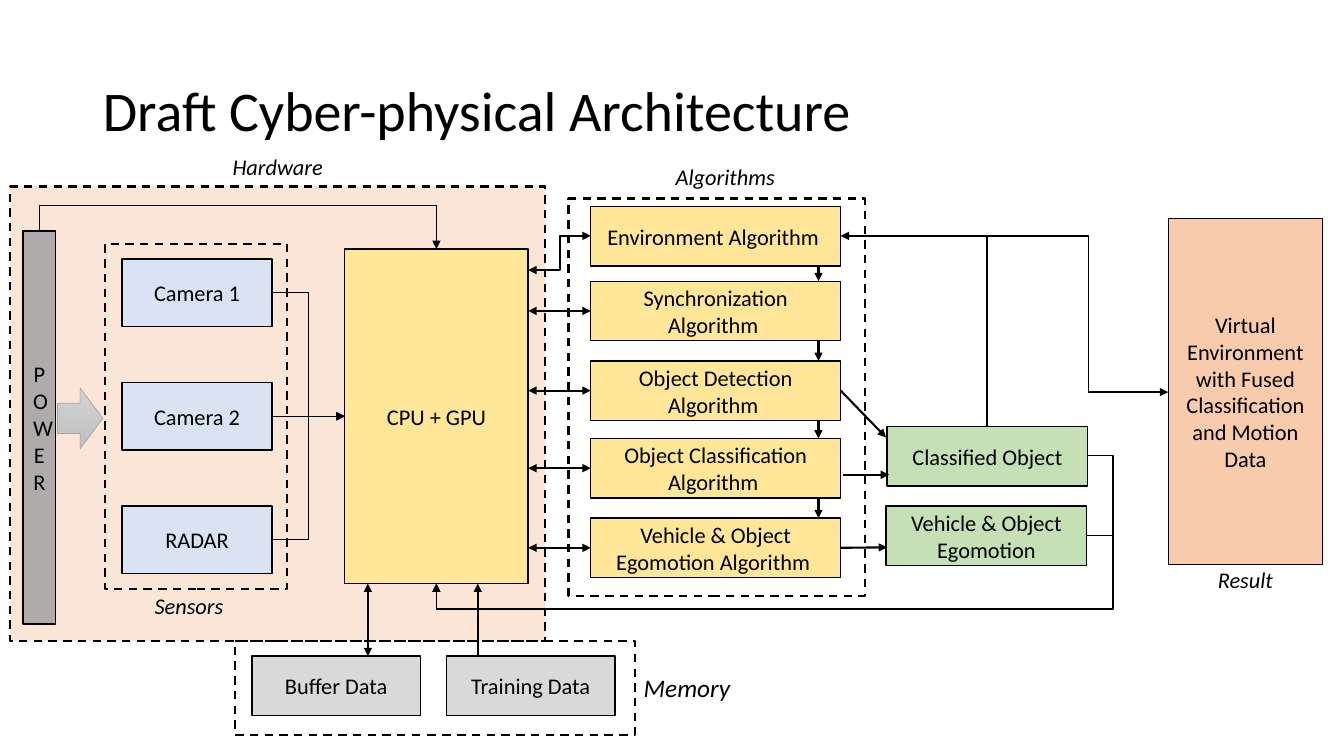
from itertools import pairwise

from lxml.etree import SubElement
from pptx import Presentation
from pptx.dml.color import RGBColor
from pptx.enum.dml import MSO_LINE
from pptx.enum.shapes import MSO_CONNECTOR, MSO_SHAPE
from pptx.enum.text import MSO_ANCHOR, MSO_AUTO_SIZE, PP_ALIGN
from pptx.oxml.ns import qn
from pptx.util import Inches, Pt

CELL = Inches(0.1)
COLUMNS, ROWS = 133.33, 75
TOP, LEFT, BOTTOM, RIGHT = range(4)

BLACK = RGBColor(0x00, 0x00, 0x00)
PEACH = RGBColor(0xFB, 0xE5, 0xD6)
BLUE = RGBColor(0xDA, 0xE3, 0xF3)
YELLOW = RGBColor(0xFF, 0xE6, 0x99)
GREEN = RGBColor(0xC5, 0xE0, 0xB4)
ORANGE = RGBColor(0xF8, 0xCB, 0xAD)
LIGHT_GRAY = RGBColor(0xD9, 0xD9, 0xD9)
POWER_GRAY = RGBColor(0xAF, 0xAB, 0xAB)
ARROW_LIGHT = RGBColor(0xD2, 0xD2, 0xD2)
ARROW_DARK = RGBColor(0xC0, 0xC0, 0xC0)
ARROW_EDGE = RGBColor(0xA5, 0xA5, 0xA5)


def cells(*counts):
    return [round(count * CELL) for count in counts]


def write(holder, text, size=16, italic=False, align=PP_ALIGN.CENTER,
          anchor=MSO_ANCHOR.MIDDLE, spacing=None):
    frame = holder.text_frame
    frame.word_wrap = True
    frame.vertical_anchor = anchor
    paragraph = frame.paragraphs[0]
    paragraph.alignment = align
    paragraph.line_spacing = spacing
    run = paragraph.add_run()
    run.text = text
    run.font.name = "Calibri"
    run.font.size = Pt(size)
    run.font.italic = italic
    run.font.color.rgb = BLACK


def add_title(slide, text):
    title = slide.shapes.title
    title.left, title.top, title.width, title.height = cells(9.2, 4, 115, 14.5)
    write(title, text, size=40, align=PP_ALIGN.LEFT, spacing=0.9)


def add_box(slide, text, fill, *grid):
    box = slide.shapes.add_shape(MSO_SHAPE.RECTANGLE, *cells(*grid))
    box.shadow.inherit = False
    box.fill.solid()
    box.fill.fore_color.rgb = fill
    box.line.color.rgb = BLACK
    box.line.width = Pt(1)
    write(box, text)
    return box


def add_group_frame(slide, *grid, fill=None):
    frame = slide.shapes.add_shape(MSO_SHAPE.RECTANGLE, *cells(*grid))
    frame.shadow.inherit = False
    if fill is None:
        frame.fill.background()
    else:
        frame.fill.solid()
        frame.fill.fore_color.rgb = fill
    frame.line.color.rgb = BLACK
    frame.line.width = Pt(1.5)
    frame.line.dash_style = MSO_LINE.DASH


def add_caption(slide, text, *grid, size=16):
    caption = slide.shapes.add_textbox(*cells(*grid))
    write(caption, text, size=size, italic=True, anchor=MSO_ANCHOR.TOP)
    caption.text_frame.auto_size = MSO_AUTO_SIZE.SHAPE_TO_FIT_TEXT


def add_power_arrow(slide, *grid):
    arrow = slide.shapes.add_shape(MSO_SHAPE.RIGHT_ARROW, *cells(*grid))
    arrow.shadow.inherit = False
    arrow.fill.gradient()
    arrow.fill.gradient_angle = 270
    for stop, color in zip(arrow.fill.gradient_stops, (ARROW_LIGHT, ARROW_DARK)):
        stop.color.rgb = color
    arrow.line.color.rgb = ARROW_EDGE
    arrow.line.width = Pt(0.5)


def format_wire(wire, width, ends):
    wire.line.color.rgb = BLACK
    wire.line.width = Pt(width)
    outline = wire.line._ln
    for end in ends:
        SubElement(outline, qn(f"a:{end}End"), type="triangle")
    SubElement(wire._element.spPr, qn("a:effectLst"))


def add_wire(slide, start, stop, width=1.5, ends=("tail",), begin=None, end=None):
    wire = slide.shapes.add_connector(MSO_CONNECTOR.STRAIGHT, *cells(*start, *stop))
    if begin:
        wire.begin_connect(*begin)
    if end:
        wire.end_connect(*end)
    format_wire(wire, width, ends)


def add_elbow(slide, start, stop, *bends, width=1, ends=("tail",), upright=False):
    (x1, y1), (x2, y2) = start, stop
    spans = [(y1, y2)] if upright else [(x1, x2), (y1, y2)]
    if upright:
        x, y = (x1 + x2) / 2, (y1 + y2) / 2
        start, stop = [(x - (py - y), y + (px - x)) for px, py in (start, stop)]
    elbow = slide.shapes.add_connector(MSO_CONNECTOR.ELBOW, *cells(*start, *stop))
    properties = elbow._element.spPr
    if upright:
        properties.find(qn("a:xfrm")).set("rot", "16200000")
    geometry = properties.find(qn("a:prstGeom"))
    geometry.set("prst", f"bentConnector{len(bends) + 2}")
    guides = geometry.find(qn("a:avLst"))
    if guides is None:
        guides = SubElement(geometry, qn("a:avLst"))
    for number, (bend, (low, high)) in enumerate(zip(bends, spans), 1):
        name = "adj" if len(bends) == 1 else f"adj{number}"
        name = "adj1" if name == "adj" else name
        share = round((bend - low) / (high - low) * 100000)
        SubElement(guides, qn("a:gd"), name=name, fmla=f"val {share}")
    format_wire(elbow, width, ends)


def add_hardware(slide):
    add_group_frame(slide, 1, 18.5, 53.1, 45.1, fill=PEACH)
    add_group_frame(slide, 10.4, 24.2, 18.1, 34.2)
    add_caption(slide, "Hardware", 13.9, 14.7, 27.3, 3.7)
    add_caption(slide, "Sensors", 5.1, 58.3, 27.3, 3.7)
    processor = add_box(slide, "CPU + GPU", YELLOW, 34.2, 24.7, 18.2, 33.2)
    for index, sensor in enumerate(("Camera 1", "Camera 2", "RADAR")):
        top = 25.7 + 12.25 * index
        box = add_box(slide, sensor, BLUE, 12.1, top, 14.9, 6.7)
        start, stop = (27, top + 3.35), (34.2, 41.3)
        if index == 1:
            add_wire(slide, start, stop, width=1, begin=(box, RIGHT),
                     end=(processor, LEFT))
        else:
            add_elbow(slide, start, stop, 30.6)
    power = add_box(slide, "POWER", POWER_GRAY, 2.3, 22.9, 3.2, 39)
    power.text_frame._txBody.bodyPr.set("vert", "wordArtVert")
    add_power_arrow(slide, 5.7, 38.5, 4.5, 6)
    add_elbow(slide, (3.9, 22.9), (43.3, 24.7), 20.4, upright=True)


def add_memory(slide):
    add_group_frame(slide, 23.3, 63.6, 39.7, 9.3)
    add_caption(slide, "Memory", 54.5, 66.2, 27.3, 4, size=18)
    for store, left in (("Buffer Data", 25), ("Training Data", 44.3)):
        add_box(slide, store, LIGHT_GRAY, left, 65.1, 16.7, 5.9)
    add_wire(slide, (36.5, 57.9), (36.5, 65.1), ends=("head", "tail"))
    add_wire(slide, (47.4, 65.1), (47.4, 57.9))


def add_algorithms(slide):
    add_group_frame(slide, 56.4, 19.7, 29.4, 39.4)
    add_caption(slide, "Algorithms", 58.3, 15.7, 27.3, 3.7)
    tops = {"Environment Algorithm ": 20.5, "Synchronization Algorithm ": 27.9,
            "Object Detection Algorithm ": 35.8,
            "Object Classification Algorithm ": 43.5,
            "Vehicle & Object Egomotion Algorithm ": 51.4}
    boxes = [add_box(slide, name, YELLOW, 58.6, top, 24.8, 5.9)
             for name, top in tops.items()]
    for upper, lower in pairwise(tops.values()):
        add_wire(slide, (81.2, upper + 5.9), (81.2, lower))
    for box, top in list(zip(boxes, tops.values()))[1:]:
        add_wire(slide, (58.6, top + 2.95), (52.4, top + 2.95),
                 ends=("head", "tail"), begin=(box, LEFT))
    add_elbow(slide, (52.4, 26.8), (58.6, 23.4), 55.6, width=1.5,
              ends=("head", "tail"))
    return boxes


def add_results(slide, detection, egomotion):
    add_box(slide, "Classified Object", GREEN, 88, 42.3, 19.9, 5.9)
    add_box(slide, "Vehicle & Object Egomotion", GREEN, 87.9, 50.2, 19.9, 5.9)
    add_box(slide, "Virtual Environment with Fused Classification and Motion Data",
            ORANGE, 115.9, 21.7, 15.3, 34.3)
    add_caption(slide, "Result", 115.6, 55.7, 15.9, 3.7)
    add_wire(slide, (83.4, 38.7), (87.9, 43.4), begin=(detection, RIGHT))
    add_wire(slide, (83.6, 47.1), (88.2, 47.1))
    add_wire(slide, (83.4, 54.3), (88, 54.3), begin=(egomotion, RIGHT))
    for start in ((107.9, 45.2), (107.8, 53.1)):
        add_elbow(slide, start, (43.3, 57.9), 110.4, 60.4)
    add_elbow(slide, (83.4, 23.4), (97.9, 42.3), ends=("head",))
    add_elbow(slide, (83.6, 23.4), (115.9, 38.9), 108)


def main():
    deck = Presentation()
    deck.slide_width, deck.slide_height = cells(COLUMNS, ROWS)
    slide = deck.slides.add_slide(deck.slide_layouts[5])
    add_title(slide, "Draft Cyber-physical Architecture")
    add_hardware(slide)
    add_memory(slide)
    _, _, detection, _, egomotion = add_algorithms(slide)
    add_results(slide, detection, egomotion)
    deck.save("out.pptx")


if __name__ == "__main__":
    main()
